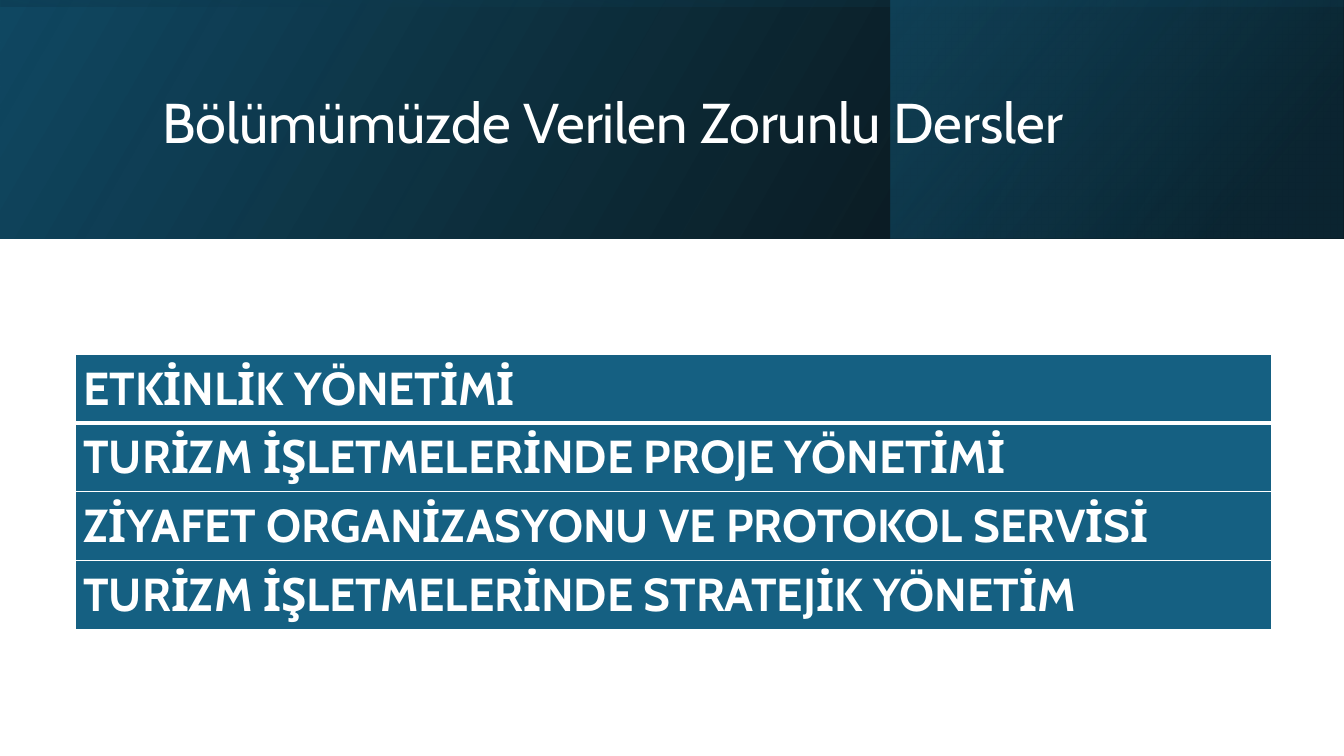
"""Build the slide listing the compulsory courses of the department."""
import pptx
import pptx.util
import pptx.dml.color
import pptx.enum.shapes
import pptx.enum.text
import pptx.oxml.ns
import lxml.etree

Pt = pptx.util.Pt
RGB = pptx.dml.color.RGBColor
qn = pptx.oxml.ns.qn

TITLE = "Bölümümüzde Verilen Zorunlu Dersler"
COURSES = [
    "ETKİNLİK YÖNETİMİ",
    "TURİZM İŞLETMELERİNDE PROJE YÖNETİMİ",
    "ZİYAFET ORGANİZASYONU VE PROTOKOL SERVİSİ",
    "TURİZM İŞLETMELERİNDE STRATEJİK YÖNETİM",
]

FONT = "Cabin"
WHITE = RGB(0xFF, 0xFF, 0xFF)
BLACK = RGB(0x00, 0x00, 0x00)
TEAL = RGB(0x15, 0x60, 0x82)
DEEP_TEAL = RGB(0x10, 0x48, 0x62)
DARK_TEAL = RGB(0x0B, 0x30, 0x41)

SLIDE_W, SLIDE_H = 960, 540
BAND_H = 170.6
PANEL_X = 636.5
TABLE_X, TABLE_Y, TABLE_W, ROW_H = 54, 253, 854.6, 49.1

# Each layer: box, rotation, clockwise gradient angle, (position, colour, opacity) stops
LAYERS = [
    ((0, 0, SLIDE_W, BAND_H), 0, 330,
     [(0, BLACK, 96), (100, DEEP_TEAL, 100)]),
    ((PANEL_X, 0, SLIDE_W - PANEL_X, BAND_H), 0, 320,
     [(19, DARK_TEAL, 68), (100, TEAL, 48)]),
    (((SLIDE_W - BAND_H) / 2, (BAND_H - SLIDE_W) / 2, BAND_H, SLIDE_W), 270, 350,
     [(23, DEEP_TEAL, 16), (99, BLACK, 45)]),
]


def add_layer(s, box, rotation, angle, stops):
    """Add a mirrored rectangle with a translucent linear gradient."""
    sp = s.shapes.add_shape(pptx.enum.shapes.MSO_SHAPE.RECTANGLE, *map(Pt, box))
    sp.rotation = rotation
    sp.shadow.inherit = False
    sp.line.fill.background()
    sp._element.spPr.find(qn("a:xfrm")).set("flipH", "1")
    sp.fill.gradient()
    sp.fill.gradient_angle = 360 - angle
    for stop, (position, colour, _) in zip(sp.fill.gradient_stops, stops):
        stop.position = position / 100
        stop.color.rgb = colour
    colours = sp._element.spPr.iter(qn("a:srgbClr"))
    for clr, (_, _, opacity) in zip(colours, stops):
        lxml.etree.SubElement(clr, qn("a:alpha"), val=str(opacity * 1000))


def add_border(cell, side, width):
    """Draw one white edge of a table cell."""
    ln = lxml.etree.SubElement(cell._tc.get_or_add_tcPr(), qn("a:ln" + side),
                               w=str(int(Pt(width))))
    fill = lxml.etree.SubElement(ln, qn("a:solidFill"))
    lxml.etree.SubElement(fill, qn("a:srgbClr"), val=str(WHITE))


def style(p, size, bold):
    """Set the shared font of a paragraph."""
    p.alignment = pptx.enum.text.PP_ALIGN.LEFT
    p.font.name = FONT
    p.font.size = Pt(size)
    p.font.bold = bold
    p.font.color.rgb = WHITE


def add_title(s):
    """Fill the title placeholder and raise it above the band."""
    sp = s.shapes.title
    sp.left, sp.top, sp.width, sp.height = map(Pt, (108.7, 27.4, 765.4, 123.8))
    tf = sp.text_frame
    tf.text = TITLE
    tf.word_wrap = True
    tf.auto_size = pptx.enum.text.MSO_AUTO_SIZE.NONE
    tf.vertical_anchor = pptx.enum.text.MSO_ANCHOR.MIDDLE
    tf.paragraphs[0].line_spacing = 0.9
    style(tf.paragraphs[0], 40, False)
    s.shapes._spTree.append(sp._element)


def add_courses(s):
    """Add the one-column table of courses."""
    table = s.shapes.add_table(len(COURSES), 1, Pt(TABLE_X), Pt(TABLE_Y), Pt(TABLE_W),
                               Pt(ROW_H * len(COURSES))).table
    table.horz_banding = False
    for i, course in enumerate(COURSES):
        table.rows[i].height = Pt(ROW_H)
        cell = table.cell(i, 0)
        cell.text = course
        cell.vertical_anchor = pptx.enum.text.MSO_ANCHOR.MIDDLE
        cell.margin_left = cell.margin_right = Pt(5.6)
        cell.margin_top = cell.margin_bottom = 0
        style(cell.text_frame.paragraphs[0], 33, True)
        widths = {"L": 1, "R": 1, "T": 3 if i == 1 else 1, "B": 3 if i == 0 else 1}
        for side, width in widths.items():
            add_border(cell, side, width)
        cell.fill.solid()
        cell.fill.fore_color.rgb = TEAL


def main():
    """Assemble and save the slide."""
    prs = pptx.Presentation()
    prs.slide_width, prs.slide_height = Pt(SLIDE_W), Pt(SLIDE_H)
    s = prs.slides.add_slide(prs.slide_layouts[5])
    for layer in LAYERS:
        add_layer(s, *layer)
    add_title(s)
    add_courses(s)
    prs.save("out.pptx")


if __name__ == "__main__":
    main()
